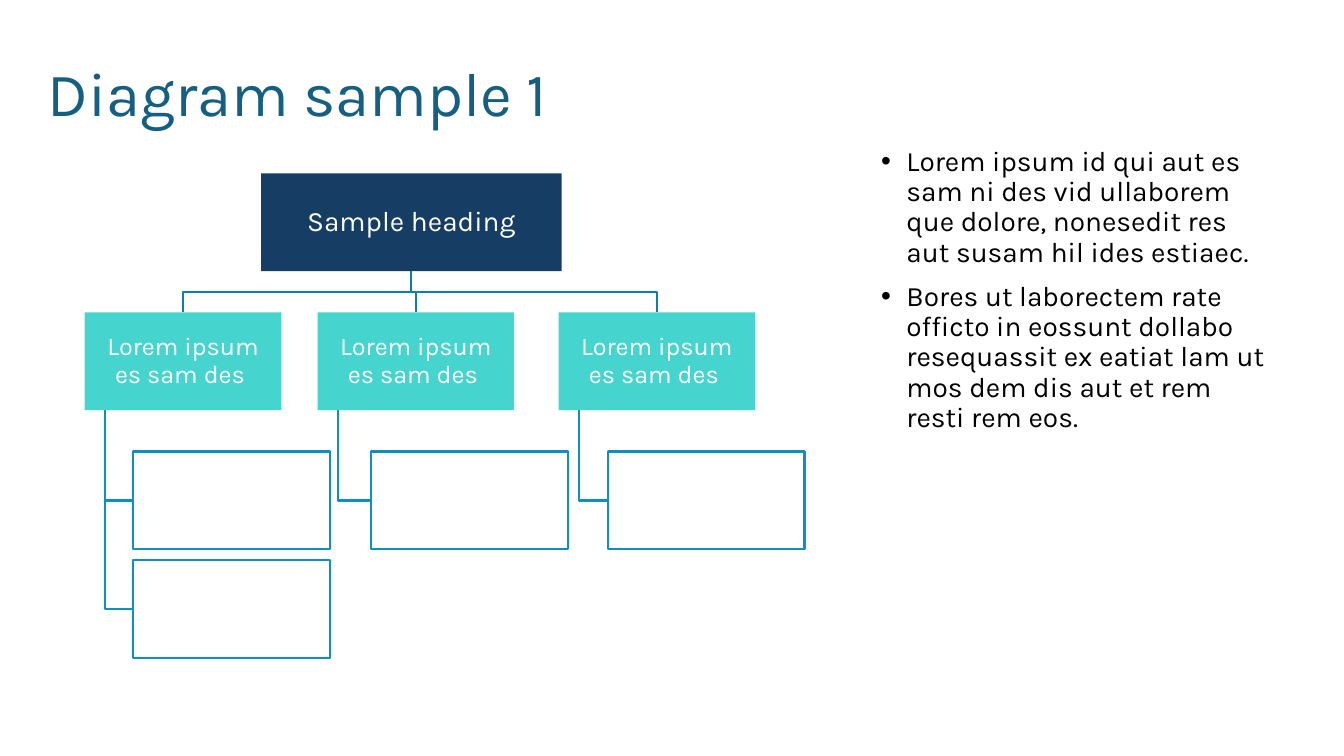
from pptx import Presentation
from pptx.dml.color import RGBColor
from pptx.enum.shapes import MSO_SHAPE as Shape
from pptx.enum.text import MSO_ANCHOR as Anchor, MSO_AUTO_SIZE as AutoSize, PP_ALIGN as Align
from pptx.util import Inches, Pt
from lxml.etree import SubElement
from pptx.oxml.ns import qn

BOX_W, BOX_H = 1.95, 0.97
HEAD_X, HEAD_Y, HEAD_W = 2.59, 1.72, 2.98
BRANCH_Y, FORK_Y = 3.1, 2.9
LEAF_Y, LEAF_STEP = 4.48, 1.08
STEM_INDENT = 0.2
BRANCHES = [(0.84, 1.32, 2), (3.15, 3.68, 1), (5.54, 6.03, 1)]
BRANCH_TEXT = "Lorem ipsum\nes sam des "
POINTS = [
    "Lorem ipsum id qui aut es sam ni des vid ullaborem que dolore, nonesedit res aut susam hil ides estiaec.",
    "Bores ut laborectem rate officto in eossunt dollabo resequassit ex eatiat lam ut mos dem dis aut et rem resti rem eos.",
]


def color(value):
    return RGBColor.from_string(value)


class DiagramSlide:
    """Draws styled elements on one slide."""

    font = "Karla"
    navy, teal, white, black = "163E64", "46D4CF", "FFFFFF", "000000"
    heading, fork, leaf = "156082", "0C7FAB", "0E8FC1"

    def __init__(self, slide):
        self.slide = slide

    def format(self, paragraph, size, fill, align):
        paragraph.font.name = self.font
        paragraph.font.size = Pt(size)
        paragraph.font.color.rgb = color(fill)
        paragraph.alignment = align
        paragraph.line_spacing = 0.9

    def place(self, placeholder, left, top, width, height, anchor):
        placeholder.left, placeholder.top = Inches(left), Inches(top)
        placeholder.width, placeholder.height = Inches(width), Inches(height)
        frame = placeholder.text_frame
        frame.auto_size = AutoSize.NONE
        frame.vertical_anchor = anchor
        return frame

    def title(self, text, *area):
        frame = self.place(self.slide.shapes.title, *area, Anchor.MIDDLE)
        frame.text = text
        self.format(frame.paragraphs[0], 44, self.heading, Align.LEFT)

    def bullets(self, points, *area):
        frame = self.place(self.slide.placeholders[1], *area, Anchor.TOP)
        frame.text = "\n".join(points)
        for paragraph in frame.paragraphs:
            self.format(paragraph, 20, self.black, Align.LEFT)
            paragraph.space_before = Pt(10)
            properties = paragraph._p.get_or_add_pPr()
            properties.set("marL", str(Inches(0.25)))
            properties.set("indent", str(-Inches(0.25)))
            SubElement(properties, qn("a:buFont")).set("typeface", "Arial")
            SubElement(properties, qn("a:buChar")).set("char", "•")

    def box(self, left, top, width, fill, line=None, text="", size=18):
        box = self.slide.shapes.add_shape(
            Shape.RECTANGLE, Inches(left), Inches(top), Inches(width), Inches(BOX_H))
        box.shadow.inherit = False
        box.fill.solid()
        box.fill.fore_color.rgb = color(fill)
        self.outline(box, line)
        if text:
            frame = box.text_frame
            frame.word_wrap = True
            frame.vertical_anchor = Anchor.MIDDLE
            frame.margin_left = frame.margin_right = Inches(0.01)
            frame.margin_top = frame.margin_bottom = Inches(0.01)
            frame.paragraphs[0].text = text
            self.format(frame.paragraphs[0], size, self.white, Align.CENTER)

    def outline(self, shape, line):
        if line:
            shape.line.color.rgb = color(line)
            shape.line.width = Pt(1.5)
        else:
            shape.line.fill.background()

    def elbow(self, line, start, *corners):
        builder = self.slide.shapes.build_freeform(*map(Inches, start))
        builder.add_line_segments(
            [(Inches(x), Inches(y)) for x, y in corners], close=False)
        elbow = builder.convert_to_shape()
        elbow.shadow.inherit = False
        elbow.fill.background()
        self.outline(elbow, line)


def main():
    deck = Presentation()
    deck.slide_width, deck.slide_height = Inches(13.33), Inches(7.5)
    page = DiagramSlide(deck.slides.add_slide(deck.slide_layouts[1]))
    page.title("Diagram sample 1", 0.37, 0.41, 12.56, 1.1)
    page.bullets(POINTS, 8.64, 1.41, 4.02, 3.54)

    trunk_x = HEAD_X + HEAD_W / 2
    for branch_x, leaf_x, leaf_count in BRANCHES:
        middle_x = branch_x + BOX_W / 2
        page.elbow(page.fork, (trunk_x, HEAD_Y + BOX_H), (trunk_x, FORK_Y),
                   (middle_x, FORK_Y), (middle_x, BRANCH_Y))
        stem_x = branch_x + STEM_INDENT
        for row in range(leaf_count):
            leaf_y = LEAF_Y + row * LEAF_STEP
            middle_y = leaf_y + BOX_H / 2
            page.elbow(page.leaf, (stem_x, BRANCH_Y + BOX_H),
                       (stem_x, middle_y), (leaf_x, middle_y))
            page.box(leaf_x, leaf_y, BOX_W, page.white, page.leaf)
        page.box(branch_x, BRANCH_Y, BOX_W, page.teal, text=BRANCH_TEXT)
    page.box(HEAD_X, HEAD_Y, HEAD_W, page.navy, text="Sample heading", size=20)
    deck.save("out.pptx")


if __name__ == "__main__":
    main()
